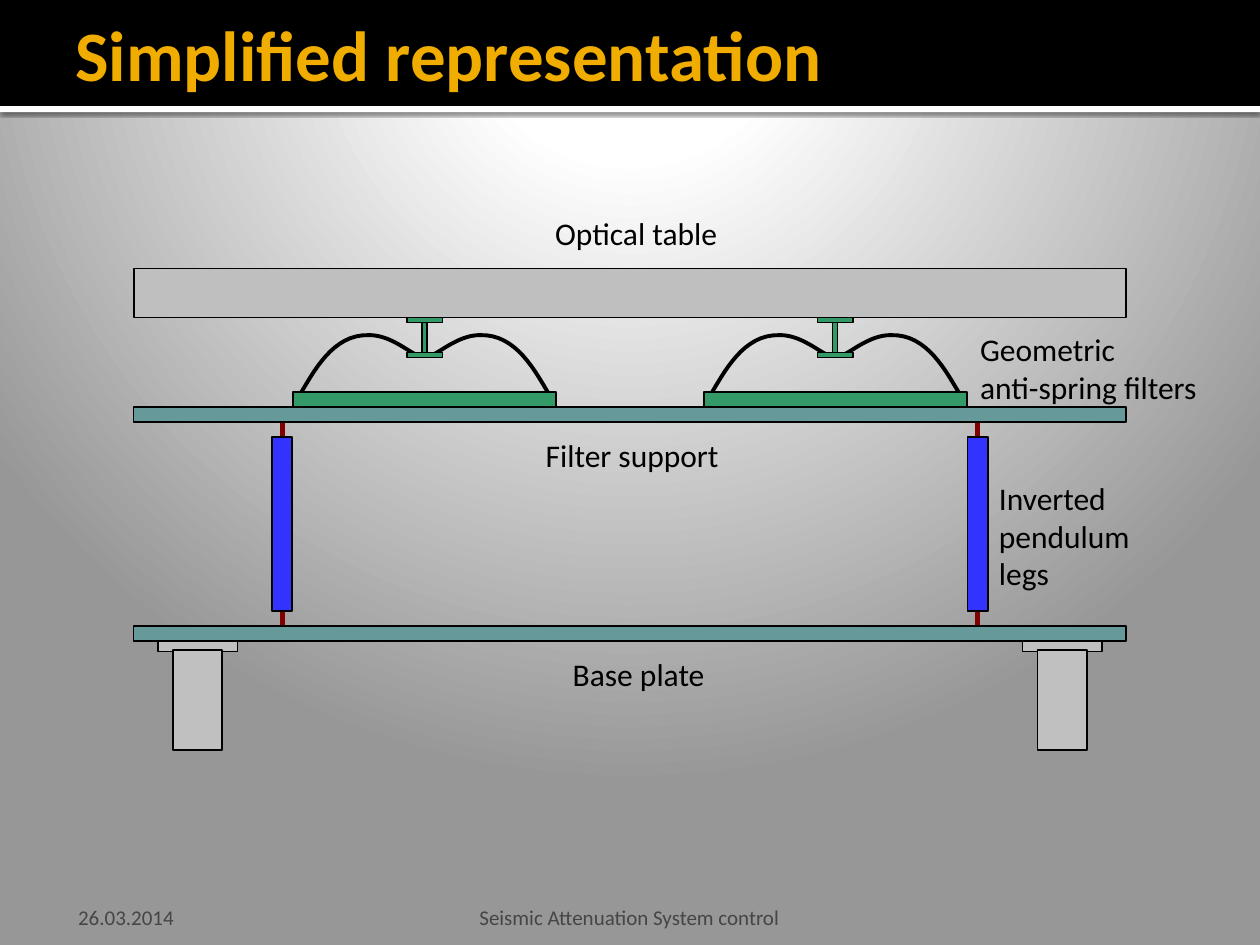
from dataclasses import dataclass

from lxml import etree
from pptx import Presentation
from pptx.dml.color import RGBColor
from pptx.enum.shapes import MSO_CONNECTOR, MSO_SHAPE
from pptx.enum.text import MSO_ANCHOR, MSO_AUTO_SIZE, PP_ALIGN
from pptx.oxml import parse_xml
from pptx.oxml.ns import nsdecls, qn
from pptx.util import Inches, Pt

RECTANGLE = MSO_SHAPE.RECTANGLE
STRAIGHT = MSO_CONNECTOR.STRAIGHT
LEFT, CENTER, RIGHT = PP_ALIGN.LEFT, PP_ALIGN.CENTER, PP_ALIGN.RIGHT
TOP, MIDDLE, BOTTOM = MSO_ANCHOR.TOP, MSO_ANCHOR.MIDDLE, MSO_ANCHOR.BOTTOM
FIT_SHAPE = MSO_AUTO_SIZE.SHAPE_TO_FIT_TEXT

MIDDLE_X = 5
SIDES = (-1, 1)
CURVE_STEPS = 16


@dataclass(frozen=True)
class Theme:
    font: str = "Calibri"
    black: str = "000000"
    white: str = "FFFFFF"
    backdrop: str = "979797"
    title: str = "F0AD00"
    footer: str = "454545"
    foot: str = "C0C0C0"
    table: str = "BFBFBF"
    plate: str = "669999"
    leg: str = "3333FF"
    joint: str = "800000"
    spring: str = "339966"
    title_size: float = 40.5
    label_size: float = 18
    footer_size: float = 12


def bezier(start, first, second, end):
    """Points along a cubic curve, without its start."""
    points = []
    for step in range(1, CURVE_STEPS + 1):
        t = step / CURVE_STEPS
        weights = ((1 - t) ** 3, 3 * t * (1 - t) ** 2, 3 * t * t * (1 - t), t ** 3)
        corners = (start, first, second, end)
        points.append(tuple(sum(w * c[axis] for w, c in zip(weights, corners))
                            for axis in (0, 1)))
    return points


class Sketch:
    """Holds the theme, the slide and the shapes that new elements join."""

    def __init__(self, page, theme):
        self.page = page
        self.theme = theme
        self.shapes = page.shapes

    def background(self):
        stops = ((0, self.theme.white), (20, self.theme.white), (100, self.theme.backdrop))
        stop_xml = "".join(f'<a:gs pos="{place * 1000}"><a:srgbClr val="{color}"/></a:gs>'
                           for place, color in stops)
        self.page.element.cSld.insert(0, parse_xml(
            f'<p:bg {nsdecls("p", "a")}><p:bgPr><a:gradFill><a:gsLst>{stop_xml}</a:gsLst>'
            '<a:path path="circle"><a:fillToRect l="10000" t="-25000" r="10000" b="125000"/>'
            '</a:path></a:gradFill><a:effectLst/></p:bgPr></p:bg>'))

    def start_group(self):
        self.shapes = self.page.shapes.add_group_shape().shapes

    def end_group(self):
        self.shapes = self.page.shapes

    def bar(self, left, top, width, height, fill, outline=1):
        bar = self.shapes.add_shape(RECTANGLE, Inches(left), Inches(top),
                                    Inches(width), Inches(height))
        bar.shadow.inherit = False
        bar.fill.solid()
        bar.fill.fore_color.rgb = RGBColor.from_string(fill)
        if outline:
            self.stroke(bar.line, self.theme.black, outline)
        else:
            bar.line.fill.background()
        return bar

    def centered_bar(self, center, top, width, height, fill, outline=1):
        return self.bar(center - width / 2, top, width, height, fill, outline)

    def stroke(self, line, color, width):
        line.color.rgb = RGBColor.from_string(color)
        line.width = Pt(width)

    def drop_shadow(self, shape):
        effects = shape._element.spPr.find(qn("a:effectLst"))
        effects.append(parse_xml(
            f'<a:outerShdw {nsdecls("a")} blurRad="{Pt(2.5)}" dist="{Pt(0.8)}" dir="5400000">'
            f'<a:srgbClr val="{self.theme.black}"><a:alpha val="60000"/></a:srgbClr>'
            '</a:outerShdw>'))

    def vertical_line(self, x, bottom, top, color, width):
        line = self.shapes.add_connector(STRAIGHT, Inches(x), Inches(bottom),
                                         Inches(x), Inches(top))
        self.stroke(line.line, color, width)
        etree.SubElement(line._element.spPr, qn("a:effectLst"))

    def curve(self, points, width):
        places = [(Inches(x), Inches(y)) for x, y in points]
        builder = self.shapes.build_freeform(*places[0])
        builder.add_line_segments(places[1:], close=False)
        curve = builder.convert_to_shape()
        curve.shadow.inherit = False
        curve.fill.background()
        self.stroke(curve.line, self.theme.black, width)

    def text(self, words, left, top, width, height, size, color, align=LEFT, anchor=TOP,
             insets=(0.1, 0.05, 0.1, 0.05), wrap=True, bold=False):
        box = self.shapes.add_textbox(Inches(left), Inches(top), Inches(width), Inches(height))
        frame = box.text_frame
        frame.word_wrap = wrap
        if not wrap:
            frame.auto_size = FIT_SHAPE
        frame.vertical_anchor = anchor
        (frame.margin_left, frame.margin_top,
         frame.margin_right, frame.margin_bottom) = map(Inches, insets)
        frame.text = words
        for paragraph in frame.paragraphs:
            paragraph.alignment = align
            for span in paragraph.runs:
                span.font.name = self.theme.font
                span.font.size = Pt(size)
                span.font.bold = bold
                span.font.color.rgb = RGBColor.from_string(color)

    def label(self, words, left, top, width, height, align=LEFT):
        self.text(words, left, top, width, height, self.theme.label_size,
                  self.theme.black, align, wrap=False)

    def footer(self, words, left, width, inset, align=LEFT):
        self.text(words, left, 7.08, width, 0.3, self.theme.footer_size, self.theme.footer,
                  align, BOTTOM, (inset, 0.05, 0.05, 0))

    def spring_filter(self, center):
        """Two mirrored blades on a base, holding an I-beam between them."""
        green = self.theme.spring
        foot, crest, tip = (1, 3.15), (0.44, 2.66), (0.06, 2.82)
        blade = ([foot] + bezier(foot, (0.88, 2.95), (0.73, 2.65), crest)
                 + bezier(crest, (0.29, 2.66), (0.17, 2.76), tip))
        self.start_group()
        for side in SIDES:
            self.curve([(center + side * x, y) for x, y in blade], 2.25)
        self.centered_bar(center, 2.56, 0.04, 0.28, green, 0.75)
        for top in (2.52, 2.8):
            self.centered_bar(center, top, 0.28, 0.04, green, 0.75)
        self.centered_bar(center, 3.11, 2.09, 0.12, green)
        self.end_group()


def main():
    deck = Presentation()
    deck.slide_width, deck.slide_height = Inches(10), Inches(7.5)
    theme = Theme()
    sketch = Sketch(deck.slides.add_slide(deck.slide_layouts[6]), theme)

    sketch.background()
    sketch.drop_shadow(sketch.bar(0, 0.84, 10, 0.05, theme.white, outline=0))
    sketch.bar(0, 0, 10, 0.84, theme.black, outline=0)
    sketch.text("Simplified representation", 0.5, 0.09, 9, 0.67, theme.title_size, theme.title,
                anchor=MIDDLE, insets=(0.1, 0.05, 0.05, 0.05), bold=True)

    for side in SIDES:
        leg_x = MIDDLE_X + side * 2.76
        foot_x = MIDDLE_X + side * 3.43
        for bottom, top in ((4.97, 4.81), (3.51, 3.35)):
            sketch.vertical_line(leg_x, bottom, top, theme.joint, 3)
        sketch.centered_bar(leg_x, 3.47, 0.16, 1.38, theme.leg)
        sketch.centered_bar(foot_x, 5.09, 0.63, 0.08, theme.foot)
        sketch.centered_bar(foot_x, 5.16, 0.39, 0.79, theme.foot)
    for top in (4.97, 3.23):
        sketch.centered_bar(MIDDLE_X, top, 7.88, 0.12, theme.plate)
    sketch.centered_bar(MIDDLE_X, 2.13, 7.87, 0.39, theme.table)
    for side in SIDES:
        sketch.spring_filter(MIDDLE_X + side * 1.63)

    sketch.label("Optical table", 4.2, 1.65, 1.59, 0.4, RIGHT)
    sketch.label("Filter support ", 4.13, 3.41, 1.73, 0.4, RIGHT)
    sketch.label("Base plate", 4.31, 5.15, 1.38, 0.4, RIGHT)
    sketch.label("Inverted \vpendulum\nlegs", 7.83, 3.75, 1.26, 1.01)
    sketch.label("Geometric \vanti-spring filters", 7.68, 2.57, 1.98, 0.71)
    sketch.footer("26.03.2014", 0.5, 1.11, 0.12)
    sketch.footer("Seismic Attenuation System control", 1.69, 6.61, 0.05, CENTER)

    deck.save("out.pptx")


if __name__ == "__main__":
    main()
